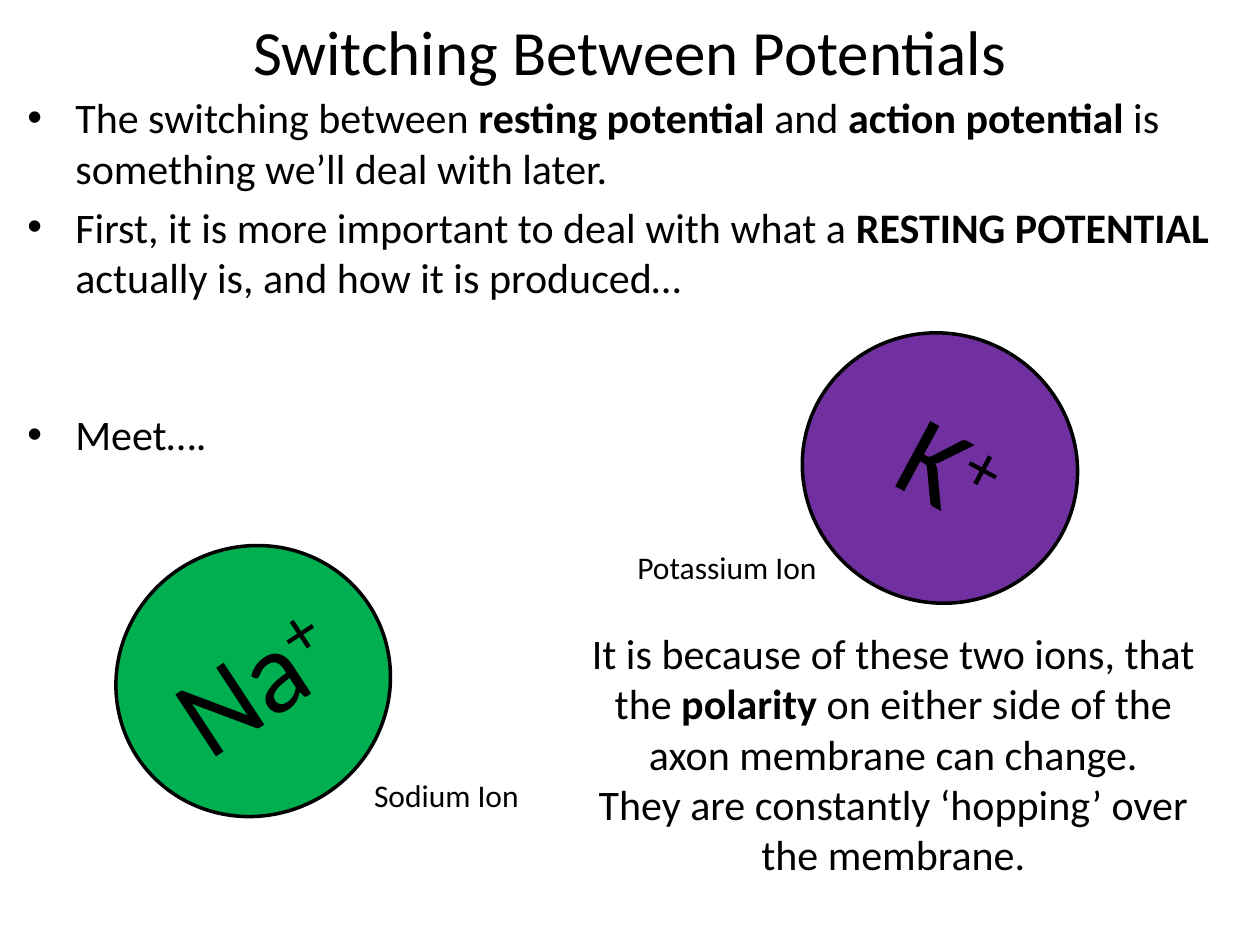
from lxml.etree import SubElement
from pptx import Presentation
from pptx.dml.color import RGBColor
from pptx.enum.shapes import MSO_SHAPE
from pptx.enum.text import MSO_ANCHOR, PP_ALIGN
from pptx.oxml.ns import qn
from pptx.util import Inches, Pt

COLOURS = {"ink": "000000", "sodium": "00B050", "potassium": "7030A0"}
FONT = "Calibri"
WIDTH, HEIGHT = 10, 7.5
INDENT = 0.38
ION_SIZE = (2.2, 2.13)
SYMBOL_SIZE = (1.57, 1.21)
LABEL_SIZE = (2.91, 0.4)

# Text between double asterisks is bold, text after a caret is superscript.
TITLE = "Switching Between Potentials"
BULLETS = [  # text, space before in points
    ("The switching between **resting potential **and **action potential **"
     "is something we’ll deal with later.", 4.8),
    ("First, it is more important to deal with what a **RESTING POTENTIAL **"
     "actually is, and how it is produced…", 4.8),
    ("Meet….", 61),
]
IONS = [  # colour, symbol, rotation, circle corner, symbol corner, label, label corner
    ("sodium", "Na^+", 326.7, (0.91, 4.34), (1.22, 4.78), "Sodium Ion", (2.87, 6.11)),
    ("potassium", "K^+", 28.3, (6.36, 2.65), (6.77, 3.09), "Potassium Ion", (4.96, 4.3)),
]
CONCLUSION = [
    "It is because of these two ions, that the **polarity** on either side "
    "of the axon membrane can change.",
    "They are constantly ‘hopping’ over the membrane.",
]


def rgb(name):
    return RGBColor.from_string(COLOURS[name])


def box(corner, size):
    return [Inches(length) for length in (*corner, *size)]


def add_run(paragraph, text, size, bold=False, raised=False):
    run = paragraph.add_run()
    run.text = text
    run.font.name, run.font.size, run.font.bold = FONT, Pt(size), bold
    run.font.color.rgb = rgb("ink")
    if raised:
        run._r.get_or_add_rPr().set("baseline", "30000")


def add_text(shapes, corner, size, lines, points, align=PP_ALIGN.LEFT):
    """Add a wrapping text box, reading the bold and superscript marks."""
    textbox = shapes.add_textbox(*box(corner, size))
    frame = textbox.text_frame
    frame.word_wrap = True
    for number, line in enumerate(lines):
        paragraph = frame.paragraphs[0] if number == 0 else frame.add_paragraph()
        paragraph.alignment = align
        for part, text in enumerate(line.split("**")):
            base, _, superscript = text.partition("^")
            if base:
                add_run(paragraph, base, points, bold=part % 2 == 1)
            if superscript:
                add_run(paragraph, superscript, points, raised=True)
    return textbox


def add_bullet(paragraph, space_before):
    paragraph.space_before = Pt(space_before)
    properties = paragraph._p.get_or_add_pPr()
    properties.set("marL", str(Inches(INDENT)))
    properties.set("indent", str(-Inches(INDENT)))
    SubElement(properties, qn("a:buFont"), typeface="Arial")
    SubElement(properties, qn("a:buChar"), char="•")


def add_ion(slide, colour, symbol, rotation, circle_corner, symbol_corner):
    ion = slide.shapes.add_group_shape().shapes
    circle = ion.add_shape(MSO_SHAPE.OVAL, *box(circle_corner, ION_SIZE))
    circle.shadow.inherit = False
    circle.fill.solid()
    circle.fill.fore_color.rgb = rgb(colour)
    circle.line.color.rgb = rgb("ink")
    circle.line.width = Pt(2)
    letters = add_text(ion, symbol_corner, SYMBOL_SIZE, [symbol], 66, PP_ALIGN.CENTER)
    circle.rotation = letters.rotation = rotation


def main():
    deck = Presentation()
    deck.slide_width, deck.slide_height = Inches(WIDTH), Inches(HEIGHT)
    slide = deck.slides.add_slide(deck.slide_layouts[6])

    title = add_text(slide.shapes, (0.05 * WIDTH, 0.21), (0.9 * WIDTH, 0.38),
                     [TITLE], 36, PP_ALIGN.CENTER)
    title.text_frame.vertical_anchor = MSO_ANCHOR.MIDDLE

    margin = 0.12
    body = add_text(slide.shapes, (margin, 0.68), (WIDTH - 2 * margin, 6.61),
                    [text for text, _ in BULLETS], 24)
    for paragraph, (_, space_before) in zip(body.text_frame.paragraphs, BULLETS):
        add_bullet(paragraph, space_before)

    for *ion, label, label_corner in IONS:
        add_ion(slide, *ion)
        add_text(slide.shapes, label_corner, LABEL_SIZE, [label], 18)

    add_text(slide.shapes, (4.45, 4.93), (5.28, 2.12), CONCLUSION, 24, PP_ALIGN.CENTER)
    deck.save("out.pptx")


if __name__ == "__main__":
    main()
